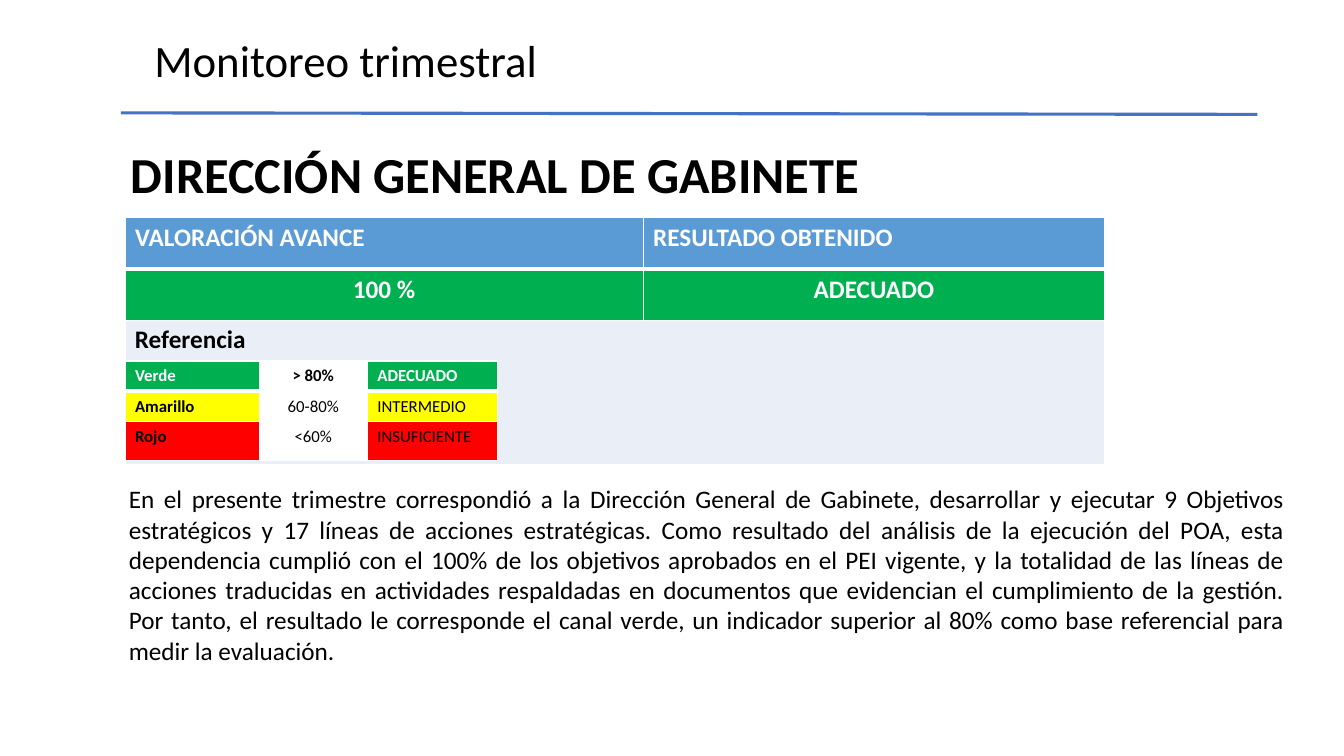
from lxml.etree import SubElement
from pptx import Presentation
from pptx.dml.color import RGBColor
from pptx.enum.shapes import MSO_CONNECTOR
from pptx.enum.text import MSO_ANCHOR, PP_ALIGN
from pptx.oxml.ns import qn
from pptx.util import Inches, Pt

WHITE, BLACK, BLUE = "FFFFFF", "000000", "5B9BD5"
GREEN, YELLOW, RED, PALE = "00B050", "FFFF00", "FF0000", "EAEFF7"
CENTER = PP_ALIGN.CENTER


def color(hex_text):
    return RGBColor.from_string(hex_text)


def write(frame, text, size=18, ink=BLACK, bold=False, align=PP_ALIGN.LEFT, spacing=None):
    frame.word_wrap = True
    para = frame.paragraphs[0]
    para.alignment = align
    if spacing:
        para.line_spacing = spacing
    span = para.add_run()
    span.text = text
    span.font.name = "Calibri"
    span.font.size = Pt(size)
    span.font.bold = bold
    span.font.color.rgb = color(ink)


def draw_border(cell, side, points):
    line = SubElement(cell._tc.get_or_add_tcPr(), qn(f"a:ln{side}"), w=str(Pt(points)))
    fill = SubElement(line, qn("a:solidFill"))
    SubElement(fill, qn("a:srgbClr"), val=WHITE)


class ReportPage:
    font_size = 18
    columns = rows = 100

    def __init__(self, deck):
        self.column = deck.slide_width / self.columns
        self.row = deck.slide_height / self.rows
        self.page = deck.slides.add_slide(deck.slide_layouts[5])

    def place(self, left, top, width, height):
        return (round(left * self.column), round(top * self.row),
                round(width * self.column), round(height * self.row))

    def title(self, text, area, **style):
        box = self.page.shapes.title
        box.left, box.top, box.width, box.height = self.place(*area)
        box.text_frame.vertical_anchor = MSO_ANCHOR.TOP
        write(box.text_frame, text, **style)

    def text(self, text, area, **style):
        box = self.page.shapes.add_textbox(*self.place(*area))
        write(box.text_frame, text, **style)

    def rule(self, left, top, width, height, ink, points):
        x, y, across, down = self.place(left, top, width, height)
        line = self.page.shapes.add_connector(
            MSO_CONNECTOR.STRAIGHT, x, y, x + across, y + down)
        line.line.color.rgb = color(ink)
        line.line.width = Pt(points)
        SubElement(line._element.spPr, qn("a:effectLst"))

    def table(self, left, top, widths, heights, content, size=font_size):
        table = self.page.shapes.add_table(
            len(heights), len(widths),
            *self.place(left, top, sum(widths), sum(heights))).table
        for column, width in zip(table.columns, widths):
            column.width = round(width * self.column)
        for row, height in zip(table.rows, heights):
            row.height = round(height * self.row)
        for r, line in enumerate(content):
            for c, (text, fill, style) in enumerate(line):
                cell = table.cell(r, c)
                for side in "LRTB":
                    header_edge = (r, side) in ((0, "B"), (1, "T"))
                    draw_border(cell, side, 3 if header_edge else 1)
                cell.fill.solid()
                cell.fill.fore_color.rgb = color(fill)
                if text:
                    write(cell.text_frame, text, size=size, **style)
        return table


def main():
    deck = Presentation()
    deck.slide_width, deck.slide_height = Inches(13.33), Inches(7.5)
    report = ReportPage(deck)

    report.title("Monitoreo trimestral", (10.73, 3.6, 81.92, 8.53), size=32)
    report.rule(9, 14.93, 84.55, 0.2, "4472C4", 2.25)
    report.text("DIRECCIÓN GENERAL DE GABINETE", (9, 17.07, 84.55, 11),
                size=36, bold=True, align=PP_ALIGN.JUSTIFY, spacing=1.15)

    light = dict(ink=WHITE, bold=True)
    light_center = dict(light, align=CENTER)
    strong = dict(bold=True)
    results = report.table(9.3, 28.8, (38.55, 34.35), (6.8, 6.8, 19), (
        (("VALORACIÓN AVANCE", BLUE, light), ("RESULTADO OBTENIDO", BLUE, light)),
        (("100 %", GREEN, light_center), ("ADECUADO", GREEN, light_center)),
        (("", PALE, {}), ("", PALE, {})),
    ))
    results.cell(2, 0).merge(results.cell(2, 1))

    report.table(9.3, 47.75, (10, 8.03, 9.67), (4, 4, 5.2), (
        (("Verde", GREEN, light), ("> 80%", WHITE, dict(bold=True, align=CENTER)),
         ("ADECUADO", GREEN, light)),
        (("Amarillo", YELLOW, strong), ("60-80%", WHITE, dict(align=CENTER)),
         ("INTERMEDIO", YELLOW, {})),
        (("Rojo", RED, strong), ("<60%", WHITE, dict(align=CENTER)),
         ("INSUFICIENTE", RED, {})),
    ), size=12)
    report.text("Referencia", (9.3, 42.13, 17.63, 5.33), bold=True)

    report.text(
        "En el presente trimestre correspondió a la Dirección General de Gabinete, "
        "desarrollar y ejecutar 9 Objetivos estratégicos y 17 líneas de acciones "
        "estratégicas. Como resultado del análisis de la ejecución del POA, esta "
        "dependencia cumplió con el 100% de los objetivos aprobados en el PEI vigente, "
        "y la totalidad de las líneas de acciones traducidas en actividades respaldadas "
        "en documentos que evidencian el cumplimiento de la gestión. Por tanto, el "
        "resultado le corresponde el canal verde, un indicador superior al 80% como "
        "base referencial para medir la evaluación.",
        (8.85, 63.33, 87.47, 25.6), align=PP_ALIGN.JUSTIFY)

    deck.save("out.pptx")


if __name__ == "__main__":
    main()
